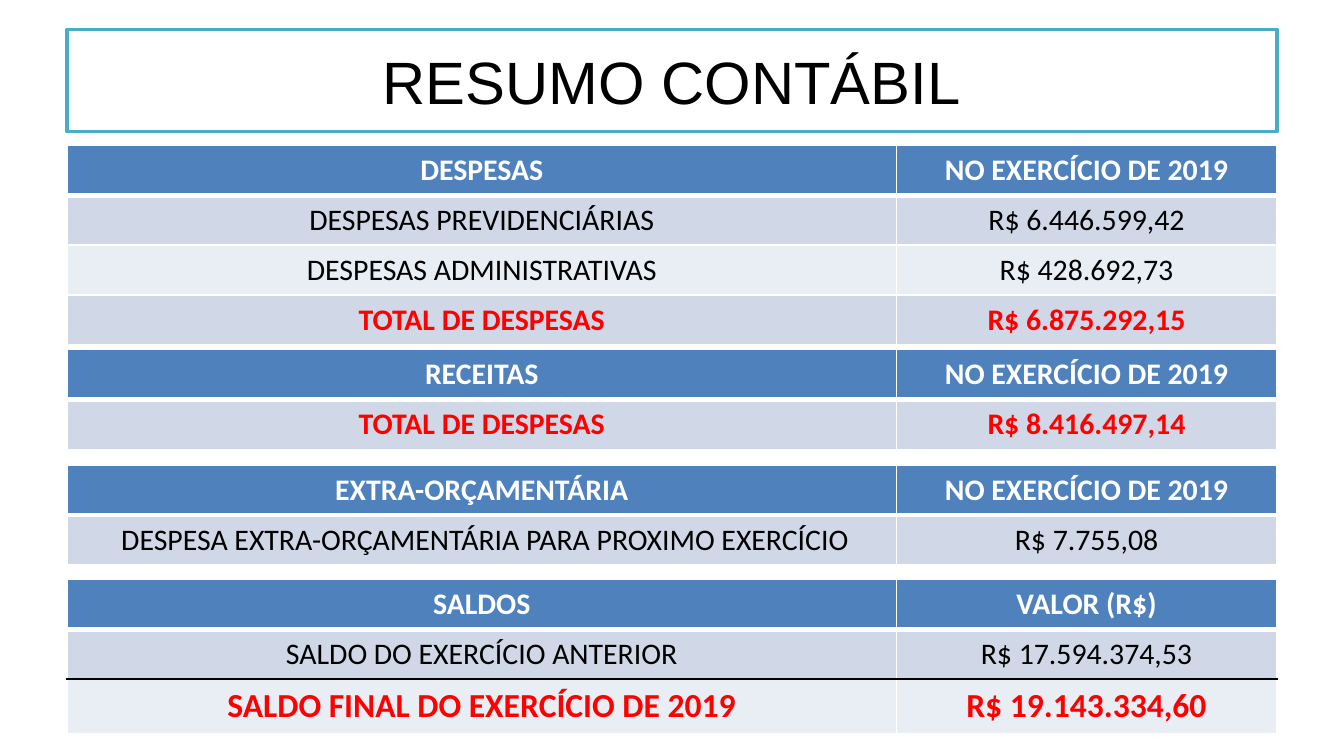
from lxml import etree
from pptx import Presentation
from pptx.dml.color import RGBColor
from pptx.enum.shapes import MSO_SHAPE
from pptx.enum.text import MSO_ANCHOR, PP_ALIGN
from pptx.oxml.ns import qn
from pptx.util import Inches, Pt

RECTANGLE = MSO_SHAPE.RECTANGLE
CENTER = PP_ALIGN.CENTER
MIDDLE = MSO_ANCHOR.MIDDLE

WHITE, BLACK, RED = "FFFFFF", "000000", "FF0000"
HEADER_FILL, TEAL = "4F81BD", "4BACC6"
BANDS = ("D0D8E8", "E9EDF4")

LEFT, WIDTH = 0.5, 9
COLUMNS = (6.17, 2.83)
ROW_HEIGHT = 0.37
YEAR = "NO EXERCÍCIO DE 2019"
THIN, THICK, DARK = (WHITE, 1), (WHITE, 3), (BLACK, 1)

# Each table: top, header, body rows (label, value, is total), text size of the last row
TABLES = [
    (1.08, ("DESPESAS", YEAR), [
        ("DESPESAS PREVIDENCIÁRIAS", "R$ 6.446.599,42", False),
        ("DESPESAS ADMINISTRATIVAS", "R$ 428.692,73", False),
        ("TOTAL DE DESPESAS", "R$ 6.875.292,15", True)], 16),
    (2.6, ("RECEITAS", YEAR), [
        ("TOTAL DE DESPESAS", "R$ 8.416.497,14", True)], 16),
    (4.31, ("SALDOS", "VALOR (R$)"), [
        ("SALDO DO EXERCÍCIO ANTERIOR", "R$ 17.594.374,53", False),
        ("SALDO FINAL DO EXERCÍCIO DE 2019", "R$ 19.143.334,60", True)], 18),
    (3.46, ("EXTRA-ORÇAMENTÁRIA", YEAR), [
        (" DESPESA EXTRA-ORÇAMENTÁRIA PARA PROXIMO EXERCÍCIO", "R$ 7.755,08", False)], 16),
]


def color(value):
    return RGBColor.from_string(value)


class SlideBuilder:
    def __init__(self, page):
        self.page = page

    def text(self, frame, words, size, font, ink, bold=False):
        para = frame.paragraphs[0]
        para.text = words
        para.alignment = CENTER
        para.font.size = Pt(size)
        para.font.name = font
        para.font.bold = bold
        para.font.color.rgb = color(ink)

    def title(self, words):
        box = self.page.shapes.add_shape(
            RECTANGLE, Inches(LEFT), Inches(0.22), Inches(WIDTH), Inches(0.76))
        box.shadow.inherit = False
        box.fill.solid()
        box.fill.fore_color.rgb = color(WHITE)
        box.line.color.rgb = color(TEAL)
        box.line.width = Pt(2)
        box.text_frame.word_wrap = True
        box.text_frame.vertical_anchor = MIDDLE
        self.text(box.text_frame, words, 32, "Arial", BLACK)

    def borders(self, cell, top, bottom):
        properties = cell._tc.get_or_add_tcPr()
        sides = {"lnL": THIN, "lnR": THIN, "lnT": top, "lnB": bottom}
        for side, (ink, width) in sides.items():
            line = etree.SubElement(properties, qn(f"a:{side}"), w=str(Pt(width)))
            fill = etree.SubElement(line, qn("a:solidFill"))
            etree.SubElement(fill, qn("a:srgbClr"), val=ink)

    def table(self, top, header, body, last_size):
        rows = [(*header, True), *body]
        count = len(rows)
        table = self.page.shapes.add_table(
            count, len(COLUMNS), Inches(LEFT), Inches(top),
            Inches(WIDTH), Inches(ROW_HEIGHT * count)).table
        for column, width in zip(table.columns, COLUMNS):
            column.width = Inches(width)
        # Horizontal rules from the top edge to the bottom edge
        rules = [THIN, THICK] + [THIN] * (count - 1)
        if last_size > 16:
            rules[-2] = DARK
        for index, (label, value, bold) in enumerate(rows):
            is_header = index == 0
            size = last_size if index == count - 1 else 16
            table.rows[index].height = Inches(0.4 if size > 16 else ROW_HEIGHT)
            ink = WHITE if is_header else RED if bold else BLACK
            for cell, words in zip(table.rows[index].cells, (label, value)):
                self.borders(cell, rules[index], rules[index + 1])
                cell.fill.solid()
                cell.fill.fore_color.rgb = color(
                    HEADER_FILL if is_header else BANDS[(index - 1) % 2])
                self.text(cell.text_frame, words, size, "Calibri", ink, bold)


def main():
    deck = Presentation()
    deck.slide_width = Inches(10)
    deck.slide_height = Inches(10 * 9 / 16)
    builder = SlideBuilder(deck.slides.add_slide(deck.slide_layouts[6]))
    builder.title("RESUMO CONTÁBIL")
    for table in TABLES:
        builder.table(*table)
    deck.save("out.pptx")


if __name__ == "__main__":
    main()
